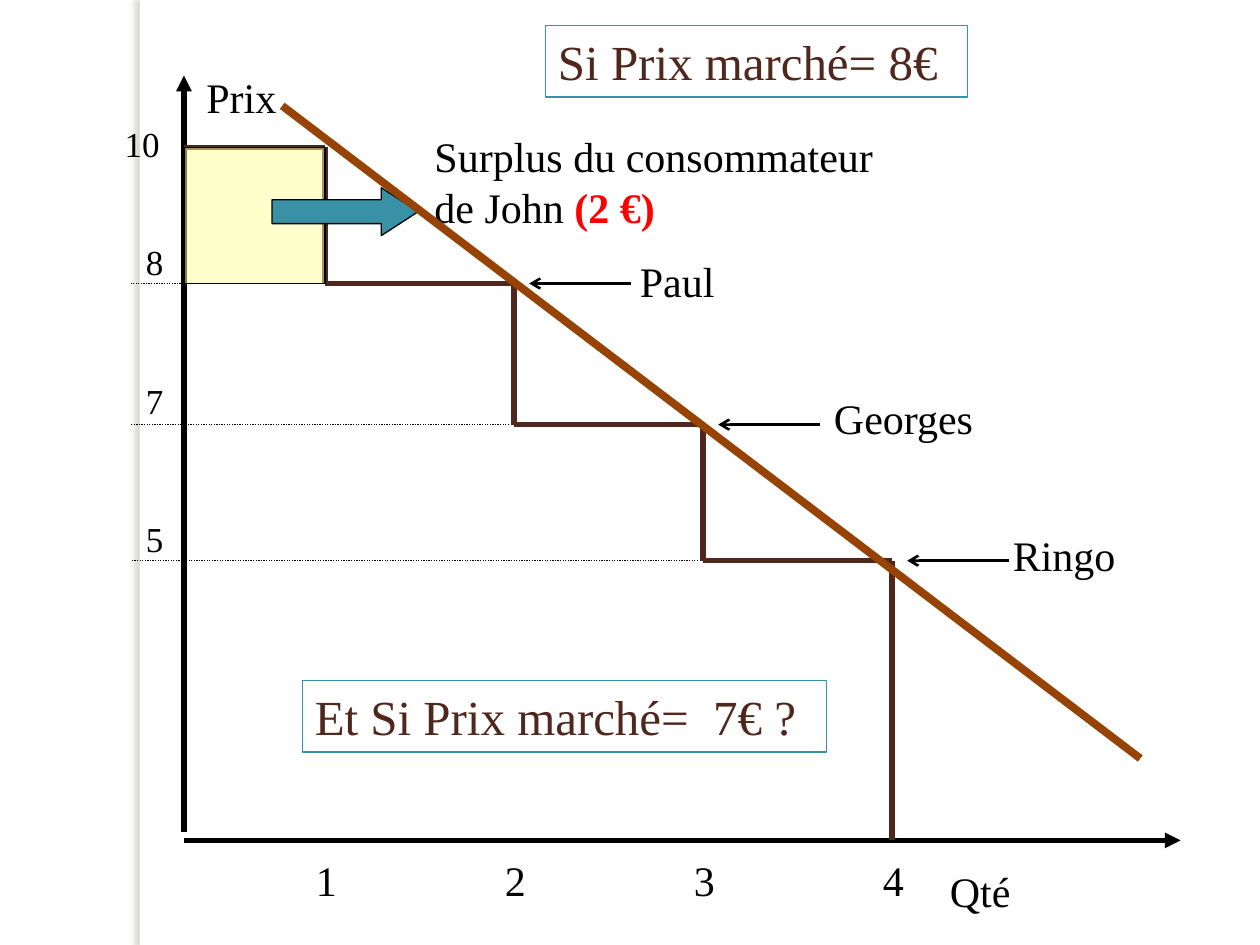
import pptx
import pptx.dml.color
import pptx.enum.dml
import pptx.enum.shapes
import pptx.oxml
import pptx.oxml.ns
import pptx.util
from pptx.util import Inches

RGBColor = pptx.dml.color.RGBColor
BLACK = RGBColor(0x00, 0x00, 0x00)
WHITE = RGBColor(0xFF, 0xFF, 0xFF)
RED = RGBColor(0xFF, 0x00, 0x00)
BROWN = RGBColor(0x4F, 0x27, 0x1C)
ORANGE = RGBColor(0x96, 0x43, 0x05)
TEAL = RGBColor(0x38, 0x91, 0xA7)
YELLOW = RGBColor(0xFF, 0xFF, 0x99)

FONT = "Times New Roman"
SHAPES = pptx.enum.shapes.MSO_SHAPE
DOTTED = pptx.enum.dml.MSO_LINE.ROUND_DOT

# Price, its height below the top of the price axis, and its label's top
STEPS = [("10", 0.57, 0.32), ("8", 1.65, 1.26), ("7", 2.77, 2.36), ("5", 3.85, 3.46)]
# Buyer, left, top and width of the name, for the second step onwards
BUYERS = [("Paul", 3.52, 1.38, 0.79), ("Georges", 5.06, 2.47, 1.31),
          ("Ringo", 6.48, 3.55, 1.02)]
FIRST_UNIT, UNIT = 1.12, 1.5


def add_element(parent, tag, content="", **attributes):
    listed = " ".join(f'{name}="{value}"' for name, value in attributes.items())
    namespace = pptx.oxml.ns.nsdecls("a")
    element = pptx.oxml.parse_xml(f"<a:{tag} {namespace} {listed}>{content}</a:{tag}>")
    parent.append(element)
    return element


def add_line(page, start, end, color, width, dash=None, head=None, tail=None):
    line = page.shapes.add_connector(
        pptx.enum.shapes.MSO_CONNECTOR.STRAIGHT,
        *(Inches(value) for value in (*start, *end)))
    line.line.color.rgb = color
    line.line.width = pptx.util.Pt(width)
    if dash:
        line.line.dash_style = dash
    outline = line.line._get_or_add_ln()
    if head:
        add_element(outline, "headEnd", type=head)
    if tail:
        add_element(outline, "tailEnd", type=tail)
    add_element(line._element.spPr, "effectLst")


def add_text(page, box, pieces, size=24, color=BLACK, wrap=False):
    label = page.shapes.add_textbox(*(Inches(value) for value in box))
    label.text_frame.word_wrap = wrap
    para = label.text_frame.paragraphs[0]
    for piece in pieces:
        span = para.add_run()
        span.text = piece
        span.font.name = FONT
        span.font.size = pptx.util.Pt(size)
        span.font.color.rgb = color
    return label


def add_block(page, kind, box, fill, outlined=True):
    block = page.shapes.add_shape(kind, *(Inches(value) for value in box))
    block.shadow.inherit = False
    block.fill.solid()
    block.fill.fore_color.rgb = fill
    if outlined:
        block.line.color.rgb = BLACK
        block.line.width = pptx.util.Pt(0.75)
    else:
        block.line.fill.background()
    return block


def draw_side_band(page, left, top, width, height):
    band = add_block(page, SHAPES.RECTANGLE, (left, top, width, height), WHITE, False)
    effects = band._element.spPr.find(pptx.oxml.ns.qn("a:effectLst"))
    tint = '<a:srgbClr val="736F63"><a:alpha val="25000"/></a:srgbClr>'
    add_element(effects, "outerShdw", tint, blurRad=pptx.util.Pt(3),
                dist=pptx.util.Pt(3), dir=180 * 60000, rotWithShape=0)


def draw_axes(page, left, top, width, height):
    corner = (left, top + height)
    add_line(page, corner, (left + width, top + height), BLACK, 3, tail="triangle")
    add_line(page, (left, top + height - 0.07), (left, top), BLACK, 3, tail="triangle")
    add_text(page, (left + 5.98, top + height + 0.15, 0.68, 0.5), ["Qté"])
    add_text(page, (left + 0.08, top - 0.08, 0.76, 0.5), ["Prix"])


def draw_demand_steps(page, left, top, height):
    bottoms = [top + step[1] for step in STEPS[1:]] + [top + height]
    previous = left
    for index, (price, drop, label_top) in enumerate(STEPS):
        edge = left + FIRST_UNIT + index * UNIT
        level = top + drop
        # Stair: one tread and one riser per unit
        add_line(page, (previous, level), (edge, level), BROWN, 3)
        add_line(page, (edge, level), (edge, bottoms[index]), BROWN, 3)
        # Price and quantity labels
        width = 0.14 + 0.17 * len(price) + 0.03
        add_text(page, (left - 0.06 - width, top + label_top, width, 0.44), [price], 20)
        add_text(page, (edge - 0.17, top + height + 0.06, 0.37, 0.5), [str(index + 1)])
        # Price guide
        if index:
            add_line(page, (previous - 0.04, level), (left - 0.42, level),
                     BLACK, 0.75, dash=DOTTED)
        previous = edge


def draw_buyers(page, left, top):
    for index, (name, x, y, width) in enumerate(BUYERS, start=1):
        tip = left + FIRST_UNIT + index * UNIT + 0.12
        level = top + STEPS[index][1]
        add_line(page, (tip, level), (tip + 0.81, level), BLACK, 1.5, head="arrow")
        add_text(page, (left + x, top + y, width, 0.5), [name])


def draw_surplus(page, left, top, width, height):
    label = add_text(page, (left + 1.89, top - 0.18, 3.7, 0.91),
                     ["Surplus du consommateur de John ", "(2 €)"], wrap=True)
    amount = label.text_frame.paragraphs[0].runs[1]
    amount.font.bold = True
    amount.font.color.rgb = RED
    # Half-transparent surplus area
    area = add_block(page, SHAPES.RECTANGLE, (left, top, width, height), YELLOW)
    tint = area._element.spPr.find(".//" + pptx.oxml.ns.qn("a:srgbClr"))
    add_element(tint, "alpha", val=50000)
    arrow = add_block(page, SHAPES.RIGHT_ARROW, (left + 0.7, top + 0.32, 1.16, 0.38), TEAL)
    arrow.adjustments[1] = 0.77


def draw_market_price(page, left, top, width, height, words):
    frame = add_text(page, (left, top, width, height), [words], 28, BROWN, wrap=True)
    frame.line.color.rgb = TEAL
    frame.line.width = pptx.util.Pt(0.75)


def main():
    deck = pptx.Presentation()
    deck.slide_width, deck.slide_height = Inches(10), Inches(7.5)
    page = deck.slides.add_slide(deck.slide_layouts[6])
    left, top, width, height = 1.46, 0.6, 7.91, 6.07

    draw_side_band(page, 1.11, 0, 0.08, 7.5)
    draw_axes(page, left, top, width, height)
    draw_demand_steps(page, left, top, height)
    draw_buyers(page, left, top)
    draw_surplus(page, left, top + STEPS[0][1], FIRST_UNIT, STEPS[1][1] - STEPS[0][1])
    draw_market_price(page, 4.33, 0.2, 3.35, 0.57, "Si Prix marché= 8€")
    draw_market_price(page, 2.4, 5.4, 4.16, 0.57, "Et Si Prix marché=  7€ ?")
    # Demand curve
    add_line(page, (2.24, 0.84), (9.05, 6.02), ORANGE, 4.5)

    deck.save("out.pptx")


if __name__ == "__main__":
    main()
